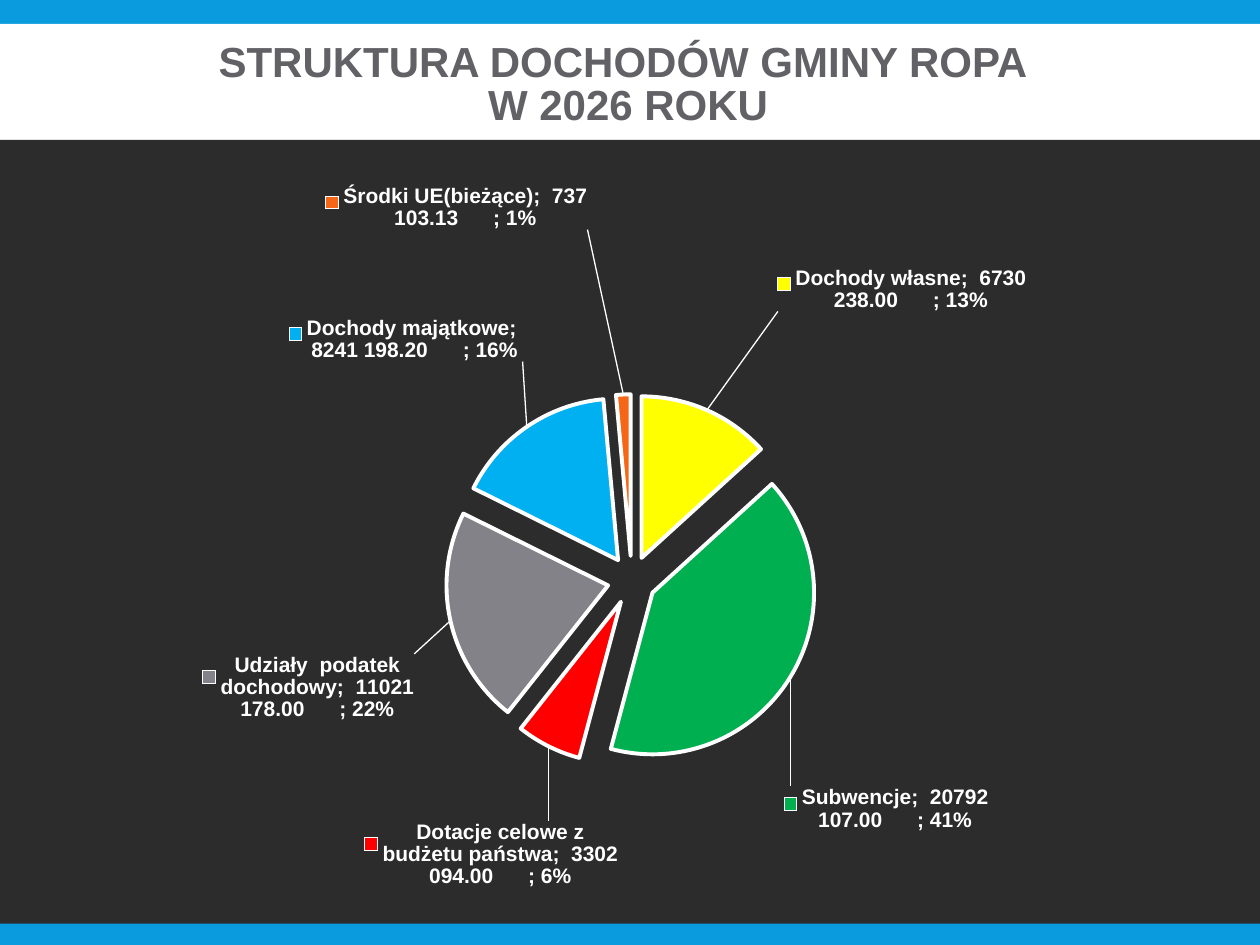
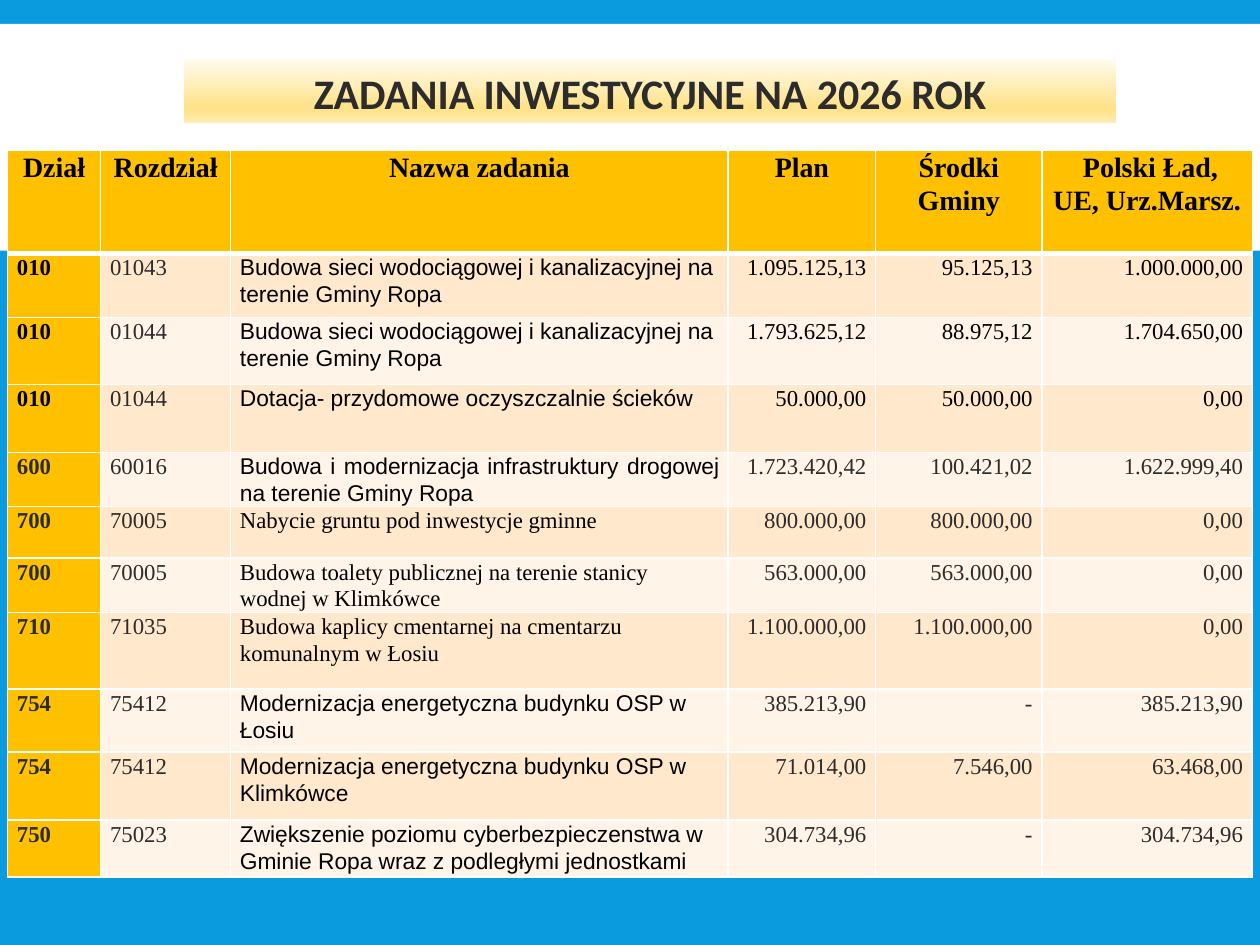
from dataclasses import dataclass

from pptx import Presentation
from pptx.chart.data import CategoryChartData
from pptx.dml.color import RGBColor
from pptx.enum.chart import XL_CHART_TYPE as ChartType
from pptx.enum.shapes import MSO_SHAPE as Shape
from pptx.enum.text import MSO_ANCHOR as Anchor, MSO_AUTO_SIZE as AutoSize, PP_ALIGN as Align
from pptx.oxml import parse_xml
from pptx.oxml.ns import nsdecls, qn
from pptx.util import Inches, Pt

INCOME_TITLE = "STRUKTURA DOCHODÓW GMINY ROPA \vW 2026 ROKU"
# category, value, slice colour, label shift in inches
INCOME = [
    ("Dochody własne", 6730238, "FFFF00", (0.54, -0.73)),
    ("Subwencje", 20792107, "00B050", (-0.1, 0.84)),
    ("Dotacje celowe z budżetu państwa", 3302094, "FF0000", (0.58, 0.54)),
    ("Udziały  podatek dochodowy", 11021178, "828288", (-0.23, 0.25)),
    ("Dochody majątkowe", 8241198.2, "00B0F0", (0, -0.47)),
    ("Środki UE(bieżące)", 737103.13, "F56617", (-1.32, -1.25)),
]
AMOUNT_FORMAT = r"_-* #\ ##0.00\ _z_ł_-;\-* #\ ##0.00\ _z_ł_-"
CHART_BOX = (-0.02, 1.11, 10.02, 6.22)
PIE_BOX = (0.61, 2.02, 8.85, 2.95)  # inches inside the chart

TASKS_TITLE = "ZADANIA INWESTYCYJNE NA 2026 ROK"
TASK_HEADER = ("Dział", "Rozdział", "Nazwa zadania", "Plan", "Środki Gminy",
               " Polski Ład, UE, Urz.Marsz.")
TASKS = [
    ("010", "01043", "Budowa sieci wodociągowej i kanalizacyjnej na terenie Gminy Ropa",
     "1.095.125,13", "95.125,13", "1.000.000,00"),
    ("010", "01044", "Budowa sieci wodociągowej i kanalizacyjnej na terenie Gminy Ropa",
     "1.793.625,12", "88.975,12", "1.704.650,00"),
    ("010", "01044", "Dotacja- przydomowe oczyszczalnie ścieków",
     "50.000,00", "50.000,00", "0,00"),
    ("600", "60016", "Budowa i modernizacja infrastruktury drogowej na terenie Gminy Ropa",
     "1.723.420,42", "100.421,02", "1.622.999,40"),
    ("700", "70005", "Nabycie gruntu pod inwestycje gminne",
     "800.000,00", "800.000,00", "0,00"),
    ("700", "70005", "Budowa toalety publicznej na terenie stanicy wodnej w Klimkówce",
     "563.000,00", "563.000,00", "0,00"),
    ("710", "71035", "Budowa kaplicy cmentarnej na cmentarzu komunalnym w Łosiu",
     "1.100.000,00", "1.100.000,00", "0,00"),
    ("754", "75412", "Modernizacja energetyczna budynku OSP w Łosiu",
     "385.213,90", "-", "385.213,90"),
    ("754", "75412", "Modernizacja energetyczna budynku OSP w Klimkówce",
     "71.014,00", "7.546,00", "63.468,00"),
    ("750", "75023", "Zwiększenie poziomu cyberbezpieczenstwa w Gminie Ropa wraz z podległymi jednostkami",
     "304.734,96", "-", "304.734,96"),
]
COLUMN_WIDTHS = (0.74, 1.03, 3.95, 1.17, 1.32, 1.67)
ROW_HEIGHTS = (0.82, 0.51, 0.53, 0.54, 0.43, 0.41, 0.43, 0.61, 0.5, 0.54, 0.45)
SERIF_SECTIONS = ("700", "710")


@dataclass(frozen=True)
class Theme:
    blue: str = "099BDD"
    white: str = "FFFFFF"
    black: str = "000000"
    dark: str = "2C2C2C"
    grey: str = "616166"
    amber: str = "FFC000"
    stripes: tuple = ("FFE8CC", "FFF4E7")
    title_gradient: tuple = ((0, "FFFCF2"), (74, "FFE38C"), (83, "FFE38C"), (100, "FFECB2"))
    sans: str = "Arial"
    serif: str = "Times New Roman"
    heading: str = "Calibri"
    title_size: int = 24
    header_size: int = 16
    body_size: int = 13
    label_size: int = 12
    chart_size: int = 10
    line_spacing: float = 1.07


THEME = Theme()


def color(code):
    return RGBColor.from_string(code)


def paint(fill, code):
    fill.solid()
    fill.fore_color.rgb = color(code)


def style(para, face, size, code, bold=False, align=Align.LEFT, spacing=THEME.line_spacing):
    para.alignment, para.line_spacing = align, spacing
    font = para.font
    font.name, font.size, font.bold = face, Pt(size), bold
    font.color.rgb = color(code)


def start_slide(deck, text, box, face, code, spacing, anchor):
    """Add a slide with the white band behind its formatted title."""
    slide = deck.slides.add_slide(deck.slide_layouts.get_by_name("Title Only"))
    paint(slide.background.fill, THEME.blue)
    band = slide.shapes.add_shape(Shape.RECTANGLE, 0, Inches(0.19), deck.slide_width, Inches(1.8))
    band.shadow.inherit = False
    paint(band.fill, THEME.white)
    band.line.fill.background()

    title = slide.shapes.title
    band.element.addnext(title.element)
    title.left, title.top, title.width, title.height = map(Inches, box)
    frame = title.text_frame
    frame.text = text
    frame.word_wrap, frame.auto_size = True, AutoSize.NONE
    frame.vertical_anchor = anchor
    style(frame.paragraphs[0], face, THEME.title_size, code, True, Align.CENTER, spacing)
    return slide


def chart_xml(tag, body):
    return parse_xml(f"<c:{tag} {nsdecls('c', 'a')}>{body}</c:{tag}>")


def solid(code):
    return f'<a:solidFill><a:srgbClr val="{code}"/></a:solidFill>'


def manual_layout(lengths, **modes):
    """Layout from lengths in inches (x, y and, if given, width and height)."""
    shares = {name: length / CHART_BOX[2 + index % 2]
              for index, (name, length) in enumerate(zip("xywh", lengths))}
    parts = "".join(f'<c:{name} val="{value}"/>' for name, value in (modes | shares).items())
    return f"<c:manualLayout>{parts}</c:manualLayout>"


def pie_labels():
    """Labels with key, name, value and share, each moved off its slice."""
    shown = {"LegendKey": 1, "Val": 1, "CatName": 1, "SerName": 0, "Percent": 1, "BubbleSize": 0}
    look = (
        "<c:spPr><a:noFill/><a:ln><a:noFill/></a:ln></c:spPr>"
        '<c:txPr><a:bodyPr wrap="square"/><a:lstStyle/><a:p><a:pPr>'
        f'<a:defRPr sz="{THEME.label_size * 100}" b="1">{solid(THEME.white)}'
        f'<a:latin typeface="{THEME.sans}"/></a:defRPr></a:pPr><a:endParaRPr lang="pl-PL"/></a:p></c:txPr>'
        '<c:dLblPos val="bestFit"/>'
        + "".join(f'<c:show{name} val="{flag}"/>' for name, flag in shown.items())
        + "<c:separator>; </c:separator>"
    )
    labels = "".join(
        f'<c:dLbl><c:idx val="{index}"/><c:layout>{manual_layout(shift)}</c:layout>{look}</c:dLbl>'
        for index, (*_, shift) in enumerate(INCOME)
    )
    leaders = ('<c:showLeaderLines val="1"/><c:leaderLines><c:spPr><a:ln w="9525">'
               f"{solid(THEME.white)}</a:ln></c:spPr></c:leaderLines>")
    return chart_xml("dLbls", labels + look + leaders)


def add_income_chart(slide):
    data = CategoryChartData(number_format=AMOUNT_FORMAT)
    data.categories = [name for name, *_ in INCOME]
    data.add_series("Series 1", [value for _, value, *_ in INCOME])
    chart = slide.shapes.add_chart(ChartType.PIE, *map(Inches, CHART_BOX), data).chart
    chart.has_title = chart.has_legend = False
    chart.font.name, chart.font.size = THEME.heading, Pt(THEME.chart_size)
    chart.font.color.rgb = color(THEME.white)

    plot = chart.plots[0]
    plot.vary_by_categories = True
    pie = plot.series[0]
    for index, (_, _, code, _) in enumerate(INCOME):
        piece = pie.points[index].format
        paint(piece.fill, code)
        piece.line.color.rgb = color(THEME.white)
        piece.line.width = Pt(2.25)

    series = pie._element
    series.find(qn("c:dPt")).addprevious(parse_xml(f'<c:explosion {nsdecls("c")} val="15"/>'))
    series.find(qn("c:cat")).addprevious(pie_labels())

    root = chart.element
    area = root.find(f".//{qn('c:plotArea')}")
    for layout in area.findall(qn("c:layout")):
        area.remove(layout)
    area.insert(0, chart_xml("layout", manual_layout(
        PIE_BOX, layoutTarget="inner", xMode="edge", yMode="edge")))
    root.find(qn("c:txPr")).addprevious(
        chart_xml("spPr", solid(THEME.dark) + "<a:ln><a:noFill/></a:ln>"))


def fill_cell(cell, text, fill, *look):
    cell.margin_left = cell.margin_right = Pt(5.4)
    cell.margin_top = cell.margin_bottom = 0
    paint(cell.fill, fill)
    cell.text = text
    para = cell.text_frame.paragraphs[0]
    style(para, *look)
    para.space_after = Pt(8)


def underline_cell(cell):
    properties = cell._tc.get_or_add_tcPr()
    properties.insert(0, parse_xml(
        f'<a:lnB {nsdecls("a")} w="{Pt(3)}">{solid(THEME.white)}</a:lnB>'))


def task_look(task, column):
    """Face, size, colour, weight and alignment of one body cell."""
    section = task[0]
    ink = THEME.black if section == "010" and column != 1 else THEME.dark
    if column == 2:
        face = THEME.serif if section in SERIF_SECTIONS else THEME.sans
        align = Align.JUSTIFY if section == "600" else Align.LEFT
        return face, THEME.body_size, THEME.black, False, align
    align = Align.RIGHT if column > 2 else Align.LEFT
    return THEME.serif, THEME.body_size, ink, column == 0, align


def add_task_table(slide):
    box = map(Inches, (0.06, 1.19, sum(COLUMN_WIDTHS), sum(ROW_HEIGHTS)))
    table = slide.shapes.add_table(len(ROW_HEIGHTS), len(COLUMN_WIDTHS), *box).table
    for column, width in zip(table.columns, COLUMN_WIDTHS):
        column.width = Inches(width)
    for row, height in zip(table.rows, ROW_HEIGHTS):
        row.height = Inches(height)

    for column, text in enumerate(TASK_HEADER):
        cell = table.cell(0, column)
        fill_cell(cell, text, THEME.amber,
                  THEME.serif, THEME.header_size, THEME.black, True, Align.CENTER)
        underline_cell(cell)
    for index, task in enumerate(TASKS):
        for column, text in enumerate(task):
            fill = THEME.stripes[index % 2] if column else THEME.amber
            fill_cell(table.cell(index + 1, column), text, fill, *task_look(task, column))


def add_title_gradient(title):
    title.fill.gradient()
    title.fill.gradient_angle = 270
    stops = title.element.find(f".//{qn('a:gsLst')}")
    for stop in list(stops):
        stops.remove(stop)
    for share, code in THEME.title_gradient:
        stops.append(parse_xml(
            f'<a:gs {nsdecls("a")} pos="{share * 1000}"><a:srgbClr val="{code}"/></a:gs>'))


def main():
    deck = Presentation()
    deck.slide_width, deck.slide_height = Inches(10), Inches(7.5)

    income = start_slide(deck, INCOME_TITLE, (0.51, 0.29, 8.95, 0.79),
                         THEME.sans, THEME.grey, 0.85, Anchor.MIDDLE)
    add_income_chart(income)

    tasks = start_slide(deck, TASKS_TITLE, (1.46, 0.46, 7.4, 0.51),
                        THEME.heading, THEME.dark, THEME.line_spacing, Anchor.TOP)
    add_title_gradient(tasks.shapes.title)
    add_task_table(tasks)

    deck.save("out.pptx")


if __name__ == "__main__":
    main()
